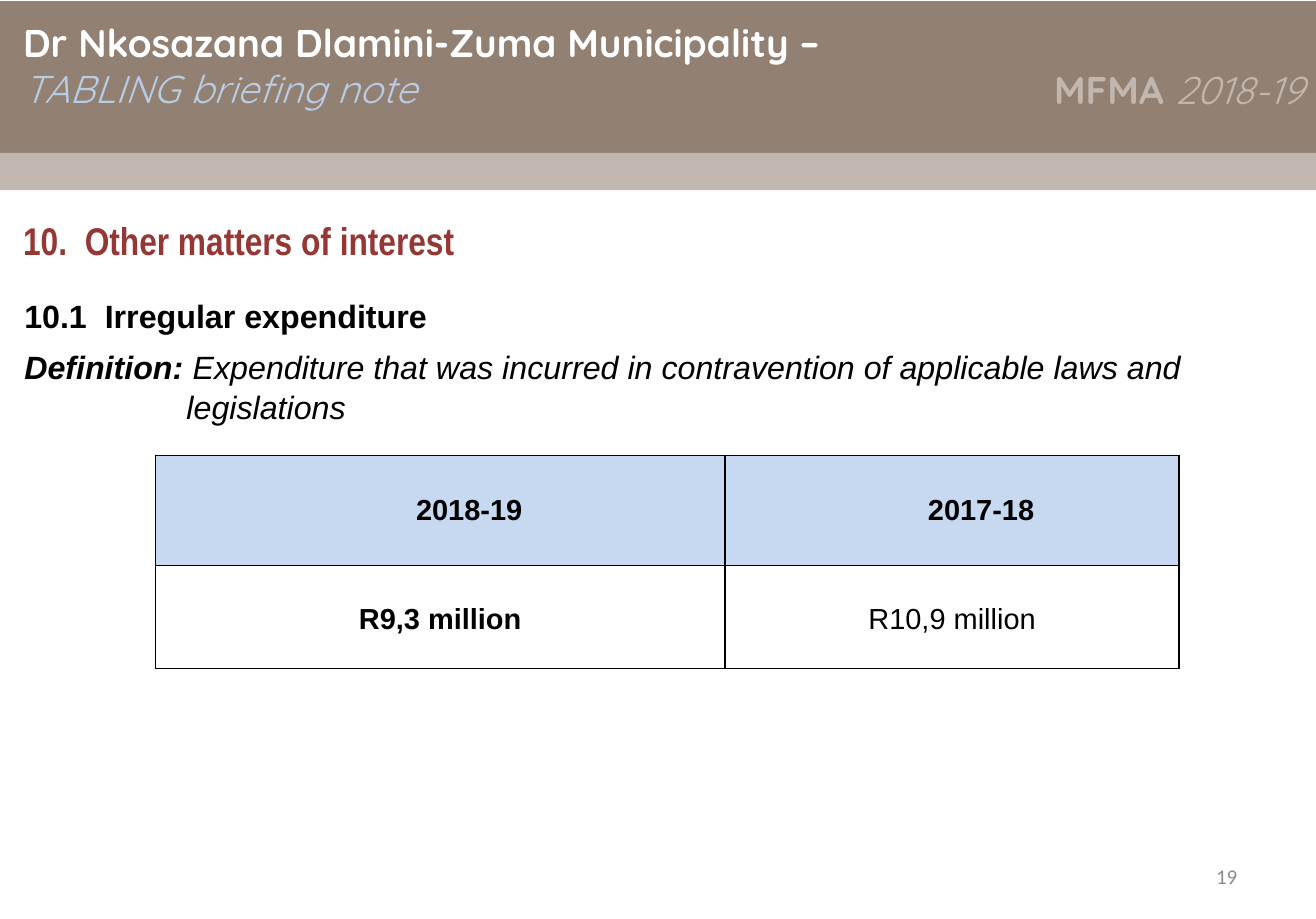
from dataclasses import dataclass
from typing import NamedTuple

from lxml import etree
from pptx import Presentation
from pptx import util as u
from pptx.dml.color import RGBColor
from pptx.enum import shapes, text
from pptx.oxml.ns import qn

SLIDE_WIDTH, SLIDE_HEIGHT = u.Inches(11.36), u.Inches(7.93)
LEFT, CENTER, RIGHT = text.PP_ALIGN.LEFT, text.PP_ALIGN.CENTER, text.PP_ALIGN.RIGHT
TOP, MIDDLE = text.MSO_ANCHOR.TOP, text.MSO_ANCHOR.MIDDLE


@dataclass(frozen=True)
class Theme:
    band: str = "928073"
    strip: str = "C1B7AF"
    white: str = "FFFFFF"
    subtitle: str = "B8CCE4"
    heading: str = "953735"
    ink: str = "000000"
    table_head: str = "C6D9F1"
    muted: str = "8C8C8C"
    brand_font: str = "Quicksand"
    heading_font: str = "Arial Narrow"
    body_font: str = "Arial"
    number_font: str = "Calibri"
    heading_size: int = 24
    body_size: int = 20
    table_size: int = 18
    number_size: int = 13


THEME = Theme()


class Place(NamedTuple):
    left: float
    top: float
    width: float
    height: float

    def lengths(self) -> tuple[int, int, int, int]:
        return (across(self.left), down(self.top), across(self.width), down(self.height))


class Run(NamedTuple):
    words: str
    color: str = THEME.ink
    bold: bool = False
    italic: bool = False


@dataclass(frozen=True)
class Passage:
    place: Place
    paragraphs: list[list[Run]]
    style: dict


def across(percent: float) -> int:
    return round(SLIDE_WIDTH * percent / 100)


def down(percent: float) -> int:
    return round(SLIDE_HEIGHT * percent / 100)


def write(frame, paragraphs: list[list[Run]], *, font: str = THEME.body_font,
          size: int = THEME.body_size, align=LEFT, before: float = 0, after: float = 0,
          spacing: float = 1.0, indent: float = 0, hanging: float = 0) -> None:
    for index, runs in enumerate(paragraphs):
        paragraph = frame.add_paragraph() if index else frame.paragraphs[0]
        paragraph.alignment = align
        paragraph.space_before, paragraph.space_after = u.Pt(before), u.Pt(after)
        paragraph.line_spacing = spacing
        properties = paragraph._p.get_or_add_pPr()
        properties.set("marL", str(u.Inches(indent + hanging)))
        properties.set("indent", str(u.Inches(-hanging)))
        for piece in runs:
            run = paragraph.add_run()
            run.text = piece.words
            run.font.name, run.font.size = font, u.Pt(size)
            run.font.bold, run.font.italic = piece.bold, piece.italic
            run.font.color.rgb = RGBColor.from_string(piece.color)


def add_band(slide, place: Place, color: str) -> None:
    band = slide.shapes.add_shape(shapes.MSO_SHAPE.RECTANGLE, *place.lengths())
    band.shadow.inherit = False
    band.fill.solid()
    band.fill.fore_color.rgb = RGBColor.from_string(color)
    band.line.fill.background()


def fill_passage(holder, passage: Passage, anchor=TOP, inset: float = 0.05) -> None:
    holder.left, holder.top, holder.width, holder.height = passage.place.lengths()
    frame = holder.text_frame
    frame.word_wrap = True
    frame.auto_size = text.MSO_AUTO_SIZE.NONE
    frame.vertical_anchor = anchor
    frame.margin_left = frame.margin_right = u.Inches(0.11)
    frame.margin_top = frame.margin_bottom = u.Inches(inset)
    write(frame, passage.paragraphs, **passage.style)


def add_passage(slide, passage: Passage, anchor=TOP, inset: float = 0.05) -> None:
    box = slide.shapes.add_textbox(*passage.place.lengths())
    fill_passage(box, passage, anchor, inset)


def outline(cell) -> None:
    properties = cell._tc.get_or_add_tcPr()
    for side in ("a:lnL", "a:lnR", "a:lnT", "a:lnB"):
        edge = etree.SubElement(properties, qn(side), w=str(u.Pt(1)))
        paint = etree.SubElement(edge, qn("a:solidFill"))
        etree.SubElement(paint, qn("a:srgbClr"), val=THEME.ink)


def add_expenditure(slide, place: Place, columns: list[float], rows: list[float],
                    entries: list[list[Run]]) -> None:
    table = slide.shapes.add_table(len(rows), len(columns), *place.lengths()).table
    table.first_row = table.horz_banding = False
    for column, width in zip(table.columns, columns):
        column.width = across(width)
    for index, (row, height) in enumerate(zip(table.rows, rows)):
        row.height = down(height)
        heading = index == 0
        for cell, entry in zip(row.cells, entries[index]):
            outline(cell)
            if heading:
                cell.fill.solid()
                cell.fill.fore_color.rgb = RGBColor.from_string(THEME.table_head)
            else:
                cell.fill.background()
            cell.vertical_anchor = MIDDLE
            cell.margin_left = cell.margin_right = u.Inches(0.07)
            cell.margin_top = cell.margin_bottom = 0
            write(cell.text_frame, [[entry]], size=THEME.table_size, align=CENTER,
                  before=2, after=2, spacing=1.0 if heading else 1.15,
                  indent=0.5 if heading else 0)


MUNICIPALITY = Passage(
    Place(0.79, 2.02, 75.27, 10.6),
    [[Run("Dr Nkosazana Dlamini-Zuma Municipality –", THEME.white, bold=True)],
     [Run("TABLING briefing note", THEME.subtitle, italic=True)]],
    dict(font=THEME.brand_font, size=THEME.heading_size))
PERIOD = Passage(
    Place(76.06, 5.8, 23.94, 7.94),
    [[Run("MFMA ", THEME.strip, bold=True), Run("2018-19", THEME.strip, italic=True)]],
    dict(font=THEME.brand_font, size=THEME.heading_size, align=RIGHT,
         before=6, after=12, spacing=1.15))
SECTION = Passage(
    Place(0.79, 22.95, 89.96, 7.06),
    [[Run("10.  Other matters of interest", THEME.heading, bold=True)]],
    dict(font=THEME.heading_font, size=THEME.heading_size, before=4.8))
TOPIC = Passage(
    Place(0.88, 31.65, 96.83, 5.7),
    [[Run("10.1  Irregular expenditure", bold=True)]],
    dict(before=4))
DEFINITION = Passage(
    Place(0.88, 37.58, 95.25, 9.5),
    [[Run("Definition:", bold=True, italic=True),
      Run(" Expenditure that was incurred in contravention of applicable laws and "
          "legislations", italic=True)]],
    dict(spacing=1.05, hanging=1.4))
PAGE_NUMBER = Passage(
    Place(71.65, 92.69, 23.33, 5.3),
    [[Run("19", THEME.muted)]],
    dict(font=THEME.number_font, size=THEME.number_size, align=RIGHT))


def main() -> None:
    deck = Presentation()
    deck.slide_width, deck.slide_height = SLIDE_WIDTH, SLIDE_HEIGHT
    slide = deck.slides.add_slide(deck.slide_layouts[5])
    add_band(slide, Place(0, 0.13, 100, 16.77), THEME.band)
    add_band(slide, Place(0, 16.65, 100, 4.04), THEME.strip)
    add_passage(slide, MUNICIPALITY, inset=0)
    add_passage(slide, PERIOD)
    fill_passage(slide.shapes.title, SECTION)
    add_passage(slide, TOPIC)
    add_passage(slide, DEFINITION, inset=0)
    add_expenditure(
        slide, Place(11.8, 49.56, 77.8, 23.2), [43.3, 34.5], [12, 11.2],
        [[Run("2018-19", bold=True), Run("2017-18", bold=True)],
         [Run("R9,3 million", bold=True), Run("R10,9 million")]])
    add_passage(slide, PAGE_NUMBER, anchor=MIDDLE)
    deck.save("out.pptx")


if __name__ == "__main__":
    main()
